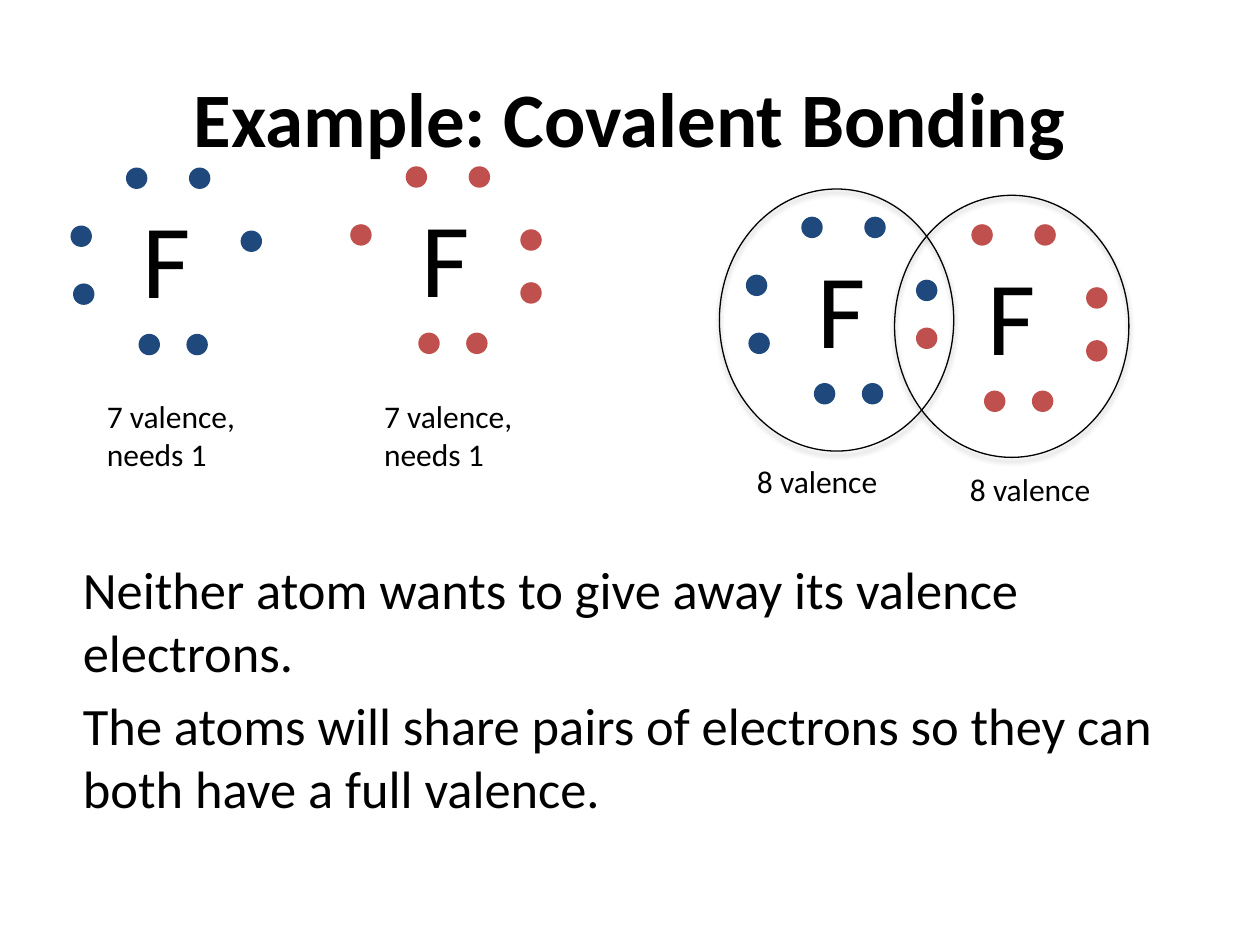
from lxml.etree import SubElement
from pptx import Presentation
from pptx.dml.color import RGBColor
from pptx.enum.shapes import MSO_SHAPE
from pptx.enum.text import MSO_ANCHOR, PP_ALIGN
from pptx.oxml.ns import qn
from pptx.util import Inches, Pt

COLORS = {"black": "000000", "blue": "1F497D", "red": "C0504D"}
FONT = "Calibri"
TITLE = "Example: Covalent Bonding"
EXPLANATION = [
    "Neither atom wants to give away its valence electrons.",
    "The atoms will share pairs of electrons so they can both have a full valence.",
]

# Electron places, measured from the corner of the atom's letter box
DOT_SIZE = 0.17
TOP_AND_BOTTOM = [(-0.03, -0.16), (0.47, -0.16), (0.07, 1.16), (0.45, 1.16)]
LEFT_UPPER, LEFT_LOWER = (-0.47, 0.3), (-0.45, 0.76)
RIGHT_UPPER, RIGHT_LOWER = (0.88, 0.34), (0.88, 0.76)
SHARED_LEFT = (-0.47, 0.66)

# Letter corner, electron colour, side electrons
ATOMS = [
    ((1.03, 1.49), "blue", [RIGHT_UPPER, LEFT_LOWER, LEFT_UPPER]),
    ((3.25, 1.48), "red", [RIGHT_UPPER, RIGHT_LOWER, LEFT_UPPER]),
    ((6.39, 1.88), "blue", [RIGHT_UPPER, LEFT_LOWER, LEFT_UPPER]),
    ((7.74, 1.94), "red", [RIGHT_UPPER, RIGHT_LOWER, SHARED_LEFT]),
]
SHELLS = [(5.71, 1.5), (7.1, 1.55)]
SHELL_SIZE = (1.86, 2.08)

# Text, left, top, height
CAPTIONS = [
    ("7 valence, needs 1", 0.75, 3.1, 0.71),
    ("7 valence, needs 1", 2.95, 3.1, 0.71),
    ("8 valence", 5.91, 3.62, 0.4),
    ("8 valence", 7.6, 3.68, 0.4),
]


def color(name):
    return RGBColor.from_string(COLORS[name])


def format_paragraph(paragraph, size, bold=False):
    font = paragraph.font
    font.name, font.size, font.bold = FONT, Pt(size), bold
    font.color.rgb = color("black")


def add_text(shapes, lines, left, top, width, height, size, space_before=0):
    box = shapes.add_textbox(*map(Inches, (left, top, width, height)))
    frame = box.text_frame
    frame.word_wrap = True
    frame.text = "\n".join(lines)
    for paragraph in frame.paragraphs:
        paragraph.space_before = Pt(space_before)
        format_paragraph(paragraph, size)


def add_oval(shapes, left, top, width, height):
    oval = shapes.add_shape(MSO_SHAPE.OVAL, *map(Inches, (left, top, width, height)))
    oval.shadow.inherit = False
    return oval


def add_atom(page, corner, color_name, side_dots):
    left, top = corner
    group = page.shapes.add_group_shape()
    for dx, dy in TOP_AND_BOTTOM + side_dots:
        dot = add_oval(group.shapes, left + dx, top + dy, DOT_SIZE, DOT_SIZE)
        dot.fill.solid()
        dot.fill.fore_color.rgb = color(color_name)
        dot.line.fill.background()
    add_text(group.shapes, ["F"], left, top, 0.67, 1.11, 60)


def add_shell(page, left, top):
    shell = add_oval(page.shapes, left, top, *SHELL_SIZE)
    shell.fill.background()
    shell.line.color.rgb = color("black")
    shell.line.width = Pt(0.75)
    # Soft shadow falling straight down
    effects = shell.element.spPr.find(qn("a:effectLst"))
    shadow = SubElement(effects, qn("a:outerShdw"), blurRad=str(Pt(3.1)),
                        dist=str(Pt(1.8)), dir=str(90 * 60000), rotWithShape="0")
    tint = SubElement(shadow, qn("a:srgbClr"), val=COLORS["black"])
    SubElement(tint, qn("a:alpha"), val="35000")


def main():
    deck = Presentation()
    deck.slide_width, deck.slide_height = Inches(10), Inches(7.5)
    page = deck.slides.add_slide(deck.slide_layouts[5])

    # Title
    title = page.shapes.title
    title.left, title.top, title.width, title.height = map(Inches, (0.5, 0.3, 9, 1.25))
    title.text_frame.text = TITLE
    title.text_frame.vertical_anchor = MSO_ANCHOR.MIDDLE
    heading = title.text_frame.paragraphs[0]
    heading.alignment = PP_ALIGN.CENTER
    format_paragraph(heading, 44, bold=True)

    # Explanation
    add_text(page.shapes, EXPLANATION, 0.56, 4.37, 8.94, 2.22, 30, space_before=6)

    # Separate and bonded atoms
    for corner, color_name, side_dots in ATOMS:
        add_atom(page, corner, color_name, side_dots)
    for left, top in SHELLS:
        add_shell(page, left, top)

    # Valence captions
    for text, left, top, height in CAPTIONS:
        add_text(page.shapes, [text], left, top, 1.67, height, 18)

    deck.save("out.pptx")


if __name__ == "__main__":
    main()
